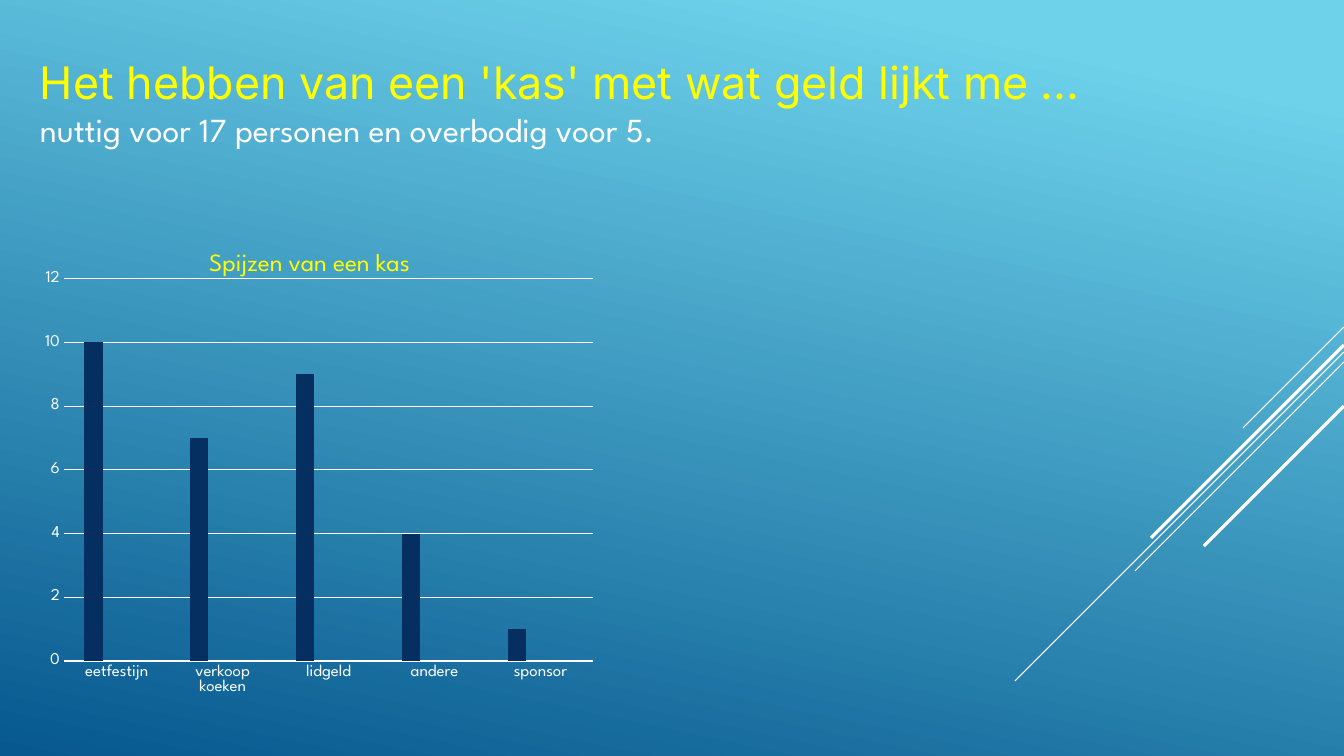
import pptx
import pptx.chart.data
import pptx.dml.color
import pptx.enum.chart
import pptx.enum.shapes
import pptx.enum.text
import pptx.oxml.ns
import pptx.oxml.xmlchemy
import pptx.util
from dataclasses import dataclass

SLIDE_W, SLIDE_H = 1344, 756
EMU_PER_PX = 7.5 * 914400 / SLIDE_H


@dataclass(frozen=True)
class Theme:
    sky: str = "6ED2EB"
    deep: str = "06588E"
    accent: str = "FFFF00"
    light: str = "FFFFFF"
    series: tuple = ("052F61", "A50E82", "14967C")
    heading_font: str = "Inter"
    body_font: str = "League Spartan"
    heading: int = 32
    subheading: int = 24
    chart_title: int = 18
    axis: int = 12
    chart: int = 10
    thin: float = 0.75
    thick: float = 2.25


THEME = Theme()


def px(n):
    return pptx.util.Emu(round(n * EMU_PER_PX))


def rgb(color):
    return pptx.dml.color.RGBColor.from_string(color)


def style_font(font, size, color, name):
    font.size = pptx.util.Pt(size)
    font.bold = False
    font.name = name
    font.color.rgb = rgb(color)


def style_line(line, color, width):
    line.color.rgb = rgb(color)
    line.width = pptx.util.Pt(width)


def set_background(slide):
    fill = slide.background.fill
    fill.gradient()
    fill.gradient_angle = 360 - 102
    for stop, position, color in zip(
        fill.gradient_stops, (0.1, 1), (THEME.sky, THEME.deep)
    ):
        stop.position = position
        stop.color.rgb = rgb(color)


def add_diagonal(slide, top, run, width):
    line = slide.shapes.add_connector(
        pptx.enum.shapes.MSO_CONNECTOR.STRAIGHT,
        px(SLIDE_W), px(top), px(SLIDE_W - run), px(top + run),
    )
    style_line(line.line, THEME.light, width)
    line._element.spPr.append(pptx.oxml.xmlchemy.OxmlElement("a:effectLst"))


def add_heading(slide, left, top, width, height, lines):
    tf = slide.shapes.add_textbox(px(left), px(top), px(width), px(height)).text_frame
    tf.word_wrap = True
    tf.auto_size = pptx.enum.text.MSO_AUTO_SIZE.SHAPE_TO_FIT_TEXT
    for i, (text, size, color, font) in enumerate(lines):
        p = tf.add_paragraph() if i else tf.paragraphs[0]
        r = p.add_run()
        r.text = text
        style_font(r.font, size, color, font)


def set_layout(parent, **values):
    layout = parent.find(pptx.oxml.ns.qn("c:layout"))
    if layout is None:
        layout = pptx.oxml.xmlchemy.OxmlElement("c:layout")
        parent.insert(1 if parent.tag == pptx.oxml.ns.qn("c:title") else 0, layout)
    manual = pptx.oxml.xmlchemy.OxmlElement("c:manualLayout")
    layout.append(manual)
    for name, value in values.items():
        item = pptx.oxml.xmlchemy.OxmlElement(f"c:{name}")
        item.set("val", str(value))
        manual.append(item)


def style_axis(axis):
    none = pptx.enum.chart.XL_TICK_MARK.NONE
    axis.major_tick_mark = none
    axis.minor_tick_mark = none
    style_font(axis.tick_labels.font, THEME.axis, THEME.light, THEME.body_font)


def add_column_chart(slide, left, top, width, height, title, categories, series):
    data = pptx.chart.data.CategoryChartData()
    data.categories = categories
    for name, values in series:
        data.add_series(name, values)
    chart = slide.shapes.add_chart(
        pptx.enum.chart.XL_CHART_TYPE.COLUMN_CLUSTERED,
        px(left), px(top), px(width), px(height), data,
    ).chart
    chart.has_legend = False
    style_font(chart.font, THEME.chart, THEME.light, THEME.body_font)

    chart.has_title = True
    r = chart.chart_title.text_frame.paragraphs[0].add_run()
    r.text = title
    style_font(r.font, THEME.chart_title, THEME.accent, THEME.body_font)
    set_layout(chart.chart_title._element, xMode="edge", yMode="edge", x=0.31, y=0.04)

    plot = chart.plots[0]
    plot.gap_width = 219
    plot.overlap = -27
    plot.vary_by_categories = False
    for column, color in zip(plot.series, THEME.series):
        column.format.fill.solid()
        column.format.fill.fore_color.rgb = rgb(color)
    set_layout(
        chart._chartSpace.chart.plotArea,
        layoutTarget="inner", xMode="edge", yMode="edge",
        x=0.06, y=0.11, w=0.94, h=0.83,
    )

    style_axis(chart.category_axis)
    style_line(chart.category_axis.format.line, THEME.light, THEME.thin)
    axis = chart.value_axis
    style_axis(axis)
    axis.minimum_scale, axis.maximum_scale, axis.major_unit = 0, 12, 2
    axis.format.line.fill.background()
    style_line(axis.major_gridlines.format.line, THEME.light, THEME.thin)


def main():
    prs = pptx.Presentation()
    prs.slide_width, prs.slide_height = px(SLIDE_W), px(SLIDE_H)
    slide = prs.slides.add_slide(prs.slide_layouts[6])
    set_background(slide)

    for top, run, width in (
        (327, 101, THEME.thin),
        (352, 329, THEME.thin),
        (362, 209, THEME.thin),
        (345, 193, THEME.thick),
        (406, 140, THEME.thick),
    ):
        add_diagonal(slide, top, run, width)

    add_heading(slide, 30, 50, 1205, 302, (
        ("Het hebben van een 'kas' met wat geld lijkt me ...",
         THEME.heading, THEME.accent, THEME.heading_font),
        ("nuttig voor 17 personen en overbodig voor 5.",
         THEME.subheading, THEME.light, THEME.body_font),
    ))

    categories = ("eetfestijn", "verkoop koeken", "lidgeld", "andere", "sponsor")
    empty = (None,) * len(categories)
    add_column_chart(
        slide, 30, 228, 564, 468, "Spijzen van een kas", categories,
        (("Series 1", (10, 7, 9, 4, 1)), ("Series 2", empty), ("Series 3", empty)),
    )
    prs.save("out.pptx")


if __name__ == "__main__":
    main()
